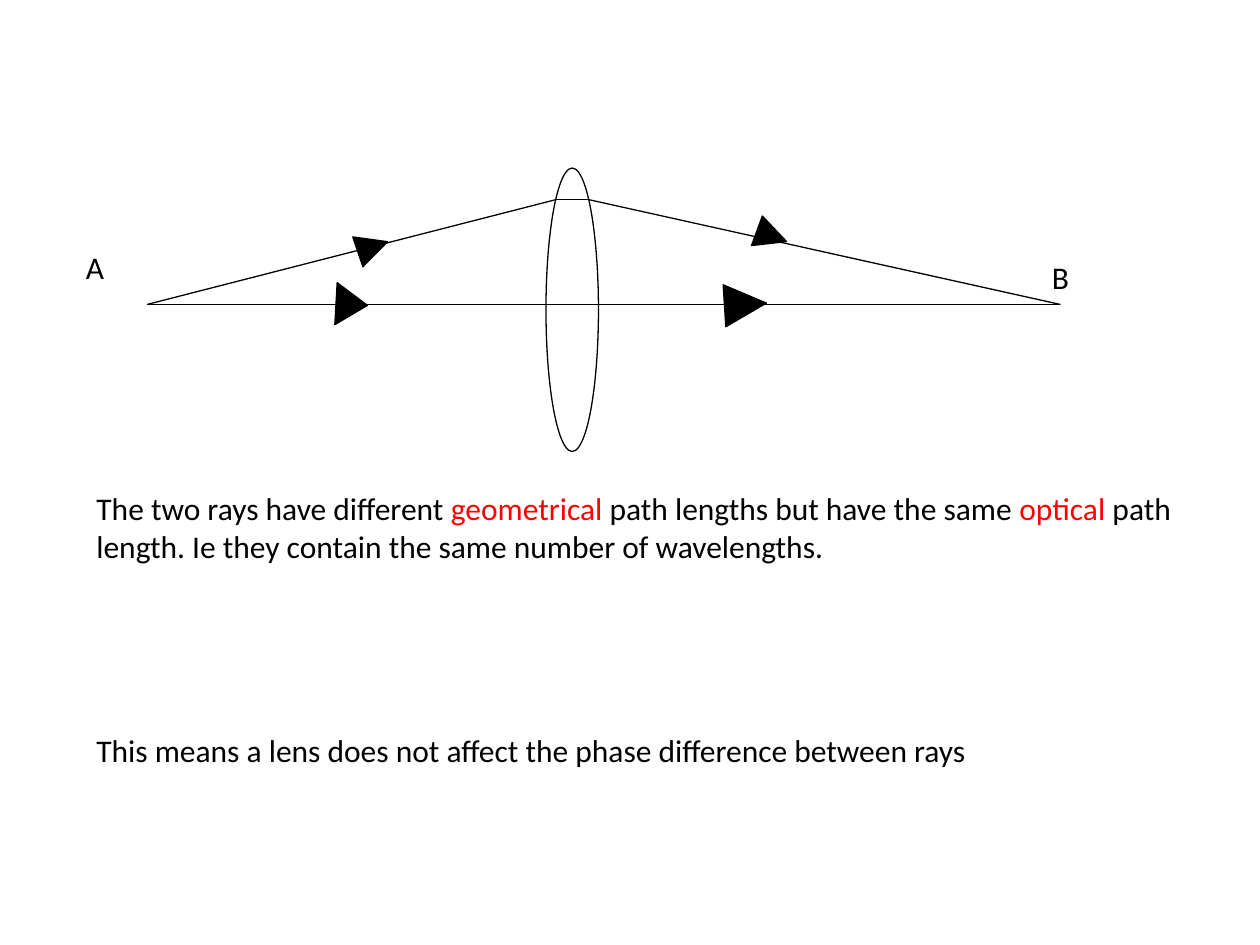
from itertools import pairwise

from lxml import etree
from pptx import Presentation
from pptx.dml.color import RGBColor
from pptx.enum.shapes import MSO_CONNECTOR, MSO_SHAPE
from pptx.oxml.ns import qn
from pptx.util import Inches, Pt

STRAIGHT = MSO_CONNECTOR.STRAIGHT
LENS = MSO_SHAPE.OVAL
TRIANGLE = MSO_SHAPE.FLOWCHART_EXTRACT

COLORS = {"ink": "000000", "accent": "FF0000"}
FONT = "Calibri"
COLS, ROWS = 120, 90  # twelve grid cells to the inch


def grid(*cells):
    return [Inches(c / 12) for c in cells]


def rgb(name):
    return RGBColor.from_string(COLORS[name])


def set_line(line):
    line.color.rgb = rgb("ink")
    line.width = Pt(0.75)


def add_text(s, box, runs):
    """Add one paragraph from (text, colour name) pairs."""
    tf = s.shapes.add_textbox(*grid(*box)).text_frame
    tf.word_wrap = True
    p = tf.paragraphs[0]
    for text, color in runs:
        r = p.add_run()
        r.text = text
        r.font.name = FONT
        r.font.size = Pt(18)
        r.font.color.rgb = rgb(color)


def add_ray(s, points):
    """Join successive grid points with straight segments."""
    for start, end in pairwise(points):
        ray = s.shapes.add_connector(STRAIGHT, *grid(*start, *end))
        set_line(ray.line)
        etree.SubElement(ray._element.spPr, qn("a:effectLst"))


def add_shape(s, kind, box, fill=None, rotation=0):
    sp = s.shapes.add_shape(kind, *grid(*box))
    sp.shadow.inherit = False
    sp.rotation = rotation
    if fill:
        sp.fill.solid()
        sp.fill.fore_color.rgb = rgb(fill)
    else:
        sp.fill.background()
    set_line(sp.line)


def main():
    prs = Presentation()
    prs.slide_width, prs.slide_height = grid(COLS, ROWS)
    s = prs.slides.add_slide(prs.slide_layouts[6])

    add_text(s, (8, 46, 106, 15.6), [
        ("The two rays have different ", "ink"),
        ("geometrical", "accent"),
        (" path lengths but have the same ", "ink"),
        ("optical", "accent"),
        (" path length. Ie they contain the same number of wavelengths.", "ink"),
    ])
    add_text(s, (8, 69, 108, 10.8), [
        ("This means a lens does not affect the phase difference between rays", "ink"),
    ])

    point_a, point_b = (14, 29), (101, 29)
    add_shape(s, LENS, (52, 16, 5, 27))
    add_ray(s, [point_a, point_b])
    add_ray(s, [point_a, (53, 19), (56, 19), point_b])

    for box, rotation in [
        ((34, 22, 3, 3), 71.3),
        ((31.5, 27.5, 4, 3), 93.2),
        ((72, 21, 3, 3), 110.1),
        ((69, 27, 4, 4), 86.4),
    ]:
        add_shape(s, TRIANGLE, box, "ink", rotation)

    for label, left, top in [("A", 7, 23), ("B", 99, 24)]:
        add_text(s, (left, top, 8, 6), [(label, "ink")])

    prs.save("out.pptx")


if __name__ == "__main__":
    main()
